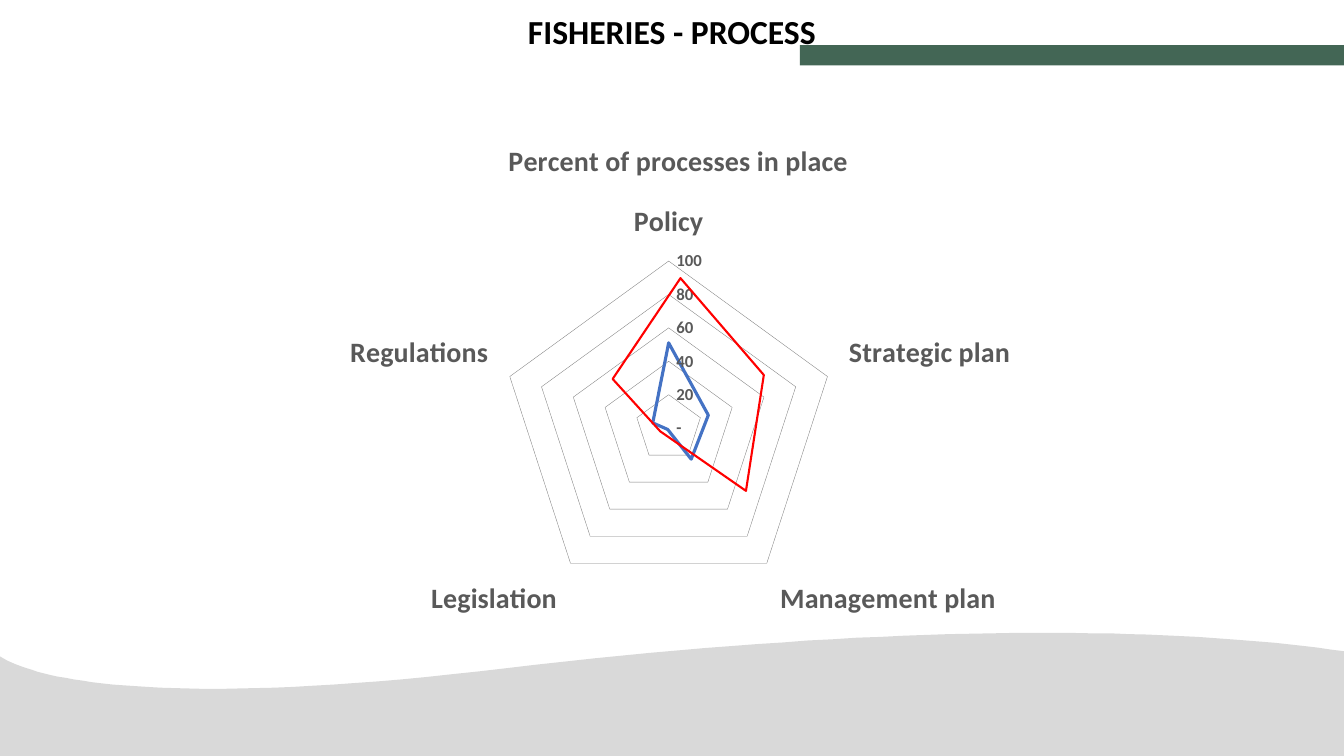
"""Build the fisheries process slide with its radar chart."""
import pptx
import pptx.util
import pptx.chart.data
import pptx.dml.color
import pptx.enum.chart
import pptx.enum.shapes
import pptx.enum.text
import pptx.oxml

Cm, Pt = pptx.util.Cm, pptx.util.Pt


def color(code):
    return pptx.dml.color.RGBColor.from_string(code)


def outline(points):
    dots = [(round(x * 100), round(y * 100)) for x, y in points]
    pen = shapes.build_freeform(*dots[0], scale=Cm(0.01))
    pen.add_line_segments(dots[1:], close=True)
    shape = pen.convert_to_shape()
    shape.shadow.inherit = False
    return shape


deck = pptx.Presentation()
deck.slide_width, deck.slide_height = Cm(33.87), Cm(19.05)
slide = deck.slides.add_slide(deck.slide_layouts[6])
shapes = slide.shapes

curves = [
    [(33.87, 16.41), (29.59, 15.8), (22.91, 15.65), (12.75, 16.84)],
    [(12.75, 16.84), (3.38, 17.96), (0.66, 16.97), (0, 16.54)],
]
steps = 40
crest = [(33.87, 19.05), (33.87, 16.41)]
for curve in curves:
    for step in range(1, steps + 1):
        t = step / steps
        parts = [(1 - t) ** 3, 3 * t * (1 - t) ** 2, 3 * t ** 2 * (1 - t), t ** 3]
        crest.append([sum(p * dot[i] for p, dot in zip(parts, curve)) for i in (0, 1)])
wave = outline(crest + [(0, 19.05)])

band = shapes.add_shape(pptx.enum.shapes.MSO_SHAPE.RECTANGLE,
                        Cm(20.16), Cm(1.14), Cm(13.71), Cm(0.51))
band.shadow.inherit = False
for shape, code in [(wave, "D9D9D9"), (band, "436655")]:
    shape.fill.solid()
    shape.fill.fore_color.rgb = color(code)
    shape.line.fill.background()

box = shapes.add_textbox(0, Cm(0.15), Cm(33.87), Cm(1.28))
box.text_frame.word_wrap = True
head = box.text_frame.paragraphs[0]
head.alignment = pptx.enum.text.PP_ALIGN.CENTER
run = head.add_run()
run.text = "FISHERIES - PROCESS"

label = "Percent of processes in place "
data = pptx.chart.data.CategoryChartData()
data.categories = ["Policy", "Strategic plan", "Management plan",
                   "Legislation", "Regulations"]
data.add_series(label, [51, 25, 23, 1, 10])
chart = shapes.add_chart(pptx.enum.chart.XL_CHART_TYPE.RADAR, Cm(6.38), Cm(3.02),
                         Cm(21.59), Cm(12.95), data).chart
chart.has_legend = False
chart.font.name, chart.font.size = "Calibri", Pt(10)
chart.has_title = True
title = chart.chart_title.text_frame.paragraphs[0].add_run()
title.text = label

names, scale = chart.category_axis, chart.value_axis
fonts = [
    (run.font, 24, "000000"),
    (title.font, 20, "595959"),
    (names.tick_labels.font, 20, "595959"),
    (scale.tick_labels.font, 12, "595959"),
]
for font, size, code in fonts:
    font.name, font.size, font.bold = "Calibri", Pt(size), True
    font.color.rgb = color(code)

for axis in (names, scale):
    axis.major_tick_mark = axis.minor_tick_mark = pptx.enum.chart.XL_TICK_MARK.NONE
names.has_major_gridlines = False
scale.minimum_scale, scale.maximum_scale, scale.major_unit = 0, 100, 20
scale.has_major_gridlines = True
scale.format.line.fill.background()
scale.tick_labels.number_format = r'_(* #,##0_);_(* \(#,##0\);_(* "-"??_);_('
scale.tick_labels.number_format_is_linked = False

series = chart.plots[0].series[0]
series.smooth = False
series.marker.style = pptx.enum.chart.XL_MARKER_STYLE.NONE
route = outline([(17.15, 7.01), (15.44, 9.55), (16.64, 10.87),
                 (18.8, 12.37), (19.25, 9.45)])
route.fill.background()
lines = [
    (names.format.line, "D9D9D9", 0.75),
    (scale.major_gridlines.format.line, "808080", 0.25),
    (series.format.line, "4472C4", 2.25),
    (route.line, "FF0000", 1.5),
]
for line, code, width in lines:
    line.color.rgb = color(code)
    line.width = Pt(width)

plot = chart.plots[0]._element.getparent()
for old in plot.findall(pptx.oxml.ns.qn("c:layout")):
    plot.remove(old)
plot.insert(0, pptx.oxml.parse_xml(
    '<c:layout xmlns:c="http://schemas.openxmlformats.org/drawingml/2006/chart">'
    '<c:manualLayout><c:layoutTarget val="inner"/>'
    '<c:xMode val="edge"/><c:yMode val="edge"/>'
    '<c:x val="0.29"/><c:y val="0.27"/><c:w val="0.39"/><c:h val="0.66"/>'
    '</c:manualLayout></c:layout>'))

deck.save("out.pptx")
